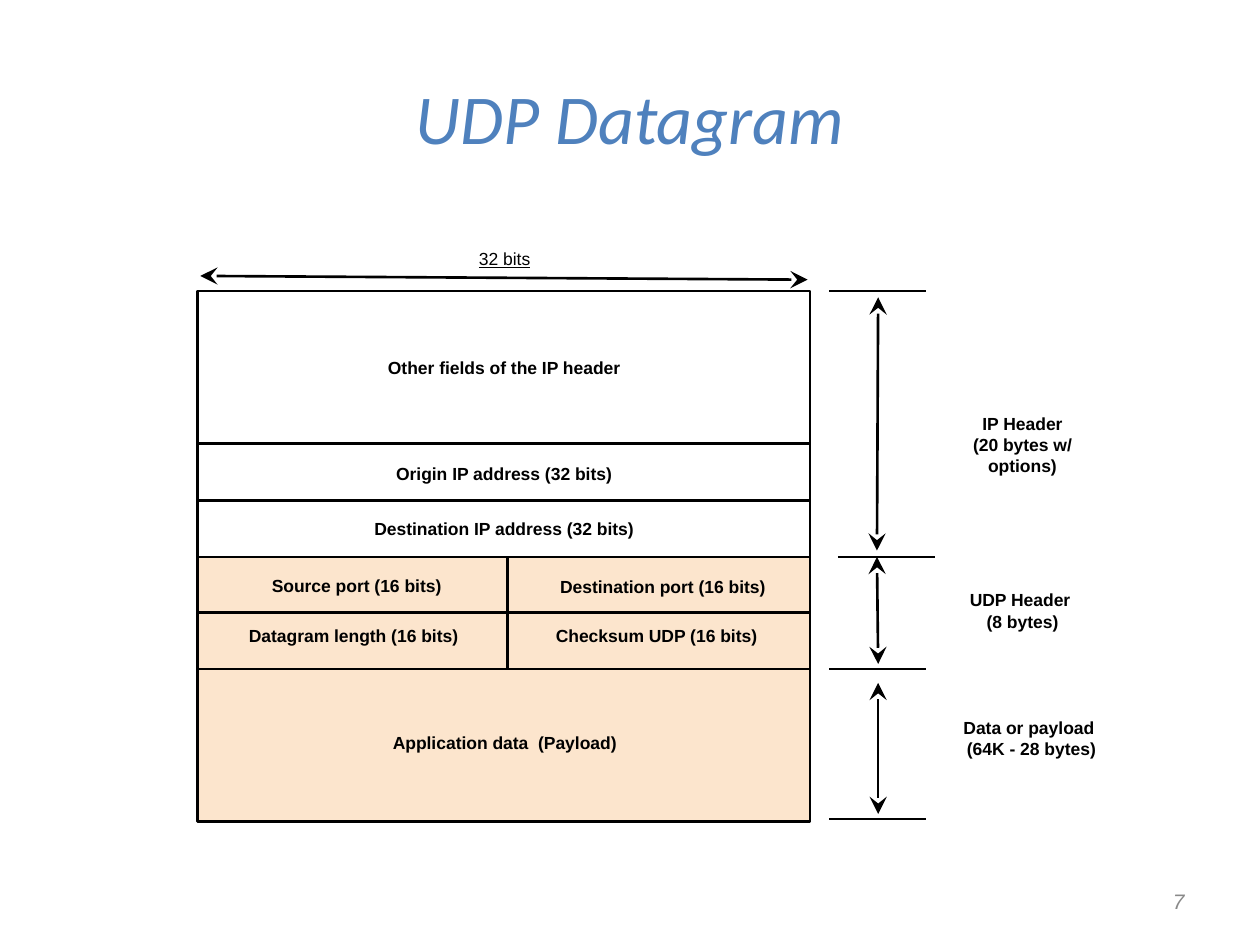
from lxml import etree
from pptx import Presentation
from pptx.dml.color import RGBColor
from pptx.enum.shapes import MSO_CONNECTOR, MSO_SHAPE
from pptx.enum.text import MSO_ANCHOR, PP_ALIGN
from pptx.oxml.ns import qn
from pptx.util import Inches, Pt

BLACK = RGBColor(0x00, 0x00, 0x00)
BLUE = RGBColor(0x4F, 0x81, 0xBD)
GREY = RGBColor(0x89, 0x89, 0x89)
PEACH = RGBColor(0xFC, 0xE5, 0xCD)
STRAIGHT, RECTANGLE = MSO_CONNECTOR.STRAIGHT, MSO_SHAPE.RECTANGLE
MIDDLE = MSO_ANCHOR.MIDDLE
CENTER, RIGHT = PP_ALIGN.CENTER, PP_ALIGN.RIGHT

WIDTH, HEIGHT = Inches(10), Inches(7.5)
COLUMNS, ROWS = 100, 75
LABEL_ROWS = 5.1

# Edges of the datagram, in grid columns and rows
LEFT, SPLIT, END = 15.7, 40.3, 64.3
EDGES = [23.1, 35.2, 39.7, 44.2, 48.6, 53.1, 65.2]

# First column, last column, row, fill, text, label centre (column, row), label width
FIELDS = [
    (LEFT, END, 0, None, "Other fields of the IP header", (40, 29.15), 30.4),
    (LEFT, END, 1, None, "Origin IP address (32 bits)", (40, 37.55), 30.4),
    (LEFT, END, 2, None, "Destination IP address (32 bits)", (40, 41.95), 30.4),
    (LEFT, SPLIT, 3, PEACH, "Source port (16 bits)", (28.3, 46.45), 17.6),
    (SPLIT, END, 3, PEACH, "Destination port (16 bits)", (52.6, 46.55), 21),
    (LEFT, SPLIT, 4, PEACH, "Datagram length (16 bits)", (28.05, 50.45), 22.1),
    (SPLIT, END, 4, PEACH, "Checksum UDP (16 bits)", (52.1, 50.45), 20),
    (LEFT, END, 5, PEACH, "Application data  (Payload)", (40.05, 58.95), 20.5),
]
# Left column and row of each section mark
MARKS = [(65.8, 23.1), (66.5, 44.2), (65.8, 53.1), (65.8, 65)]
MARK_COLUMNS = 7.7
ARROWS = [
    ((15.9, 21.9), (64.1, 22.2)),
    ((69.6, 43.7), (69.7, 23.6)),
    ((69.6, 44.2), (69.7, 52.7)),
    ((69.7, 54.2), (69.7, 64.6)),
]
SECTIONS = [
    (73.5, 32.7, ["IP Header", "(20 bytes w/", "options)"]),
    (73.5, 45.9, ["UDP Header ", "(8 bytes)"]),
    (74.2, 56, ["Data or payload ", "(64K - 28 bytes)"]),
]


class DatagramSlide:
    def __init__(self, slide):
        self.slide = slide
        self.font, self.title_font = "Arial", "Calibri"
        self.size, self.stroke = 10, Pt(1.5)

    def across(self, columns):
        return round(WIDTH * columns / COLUMNS)

    def down(self, rows):
        return round(HEIGHT * rows / ROWS)

    def place(self, left, top, width, height):
        return self.across(left), self.down(top), self.across(width), self.down(height)

    def add_lines(self, frame, lines, align=CENTER, size=None, color=BLACK, font=None,
                  bold=None, italic=None, underline=None):
        frame.word_wrap = True
        frame.vertical_anchor = MIDDLE
        for index, line in enumerate(lines):
            para = frame.paragraphs[0] if index == 0 else frame.add_paragraph()
            para.alignment = align
            span = para.add_run()
            span.text = line
            span.font.name = font or self.font
            span.font.size = Pt(size or self.size)
            span.font.color.rgb = color
            span.font.bold = bold
            span.font.italic = italic
            span.font.underline = underline

    def title(self, text):
        box = self.slide.shapes.title
        box.left, box.top, box.width, box.height = self.place(5, 3, 90, 12.5)
        self.add_lines(box.text_frame, [text], size=40, color=BLUE,
                       font=self.title_font, italic=True)

    def page_number(self, text):
        box = self.slide.shapes.add_textbox(*self.place(71.7, 69.5, 23.3, 4))
        self.add_lines(box.text_frame, [text], align=RIGHT, size=12, color=GREY,
                       italic=True)

    def label(self, left, top, width, height, lines, **look):
        box = self.slide.shapes.add_textbox(*self.place(left, top, width, height))
        frame = box.text_frame
        frame.margin_top = frame.margin_bottom = Inches(0.1)
        self.add_lines(frame, lines, **look)

    def field(self, start, end, row, fill, text, center, label_width):
        top, bottom = EDGES[row:row + 2]
        box = self.slide.shapes.add_shape(
            RECTANGLE, *self.place(start, top, end - start, bottom - top))
        box.shadow.inherit = False
        if fill is None:
            box.fill.background()
        else:
            box.fill.solid()
            box.fill.fore_color.rgb = fill
        box.line.color.rgb = BLACK
        box.line.width = self.stroke
        column, middle = center
        self.label(column - label_width / 2, middle - LABEL_ROWS / 2,
                   label_width, LABEL_ROWS, [text], bold=True)

    def line(self, start, end, arrows=False):
        line = self.slide.shapes.add_connector(
            STRAIGHT, self.across(start[0]), self.down(start[1]),
            self.across(end[0]), self.down(end[1]))
        line.line.color.rgb = BLACK
        line.line.width = self.stroke
        properties = line._element.spPr
        if arrows:
            outline = properties.find(qn("a:ln"))
            for tag in ("a:headEnd", "a:tailEnd"):
                etree.SubElement(outline, qn(tag), type="stealth", w="lg", len="lg")
        etree.SubElement(properties, qn("a:effectLst"))


def main():
    deck = Presentation()
    deck.slide_width, deck.slide_height = WIDTH, HEIGHT
    title_only = deck.slide_layouts[5]
    page = DatagramSlide(deck.slides.add_slide(title_only))

    page.title("UDP Datagram")
    page.page_number("7")
    for field in FIELDS:
        page.field(*field)
    for left, row in MARKS:
        page.line((left, row), (left + MARK_COLUMNS, row))
    for start, end in ARROWS:
        page.line(start, end, arrows=True)
    for left, top, lines in SECTIONS:
        page.label(left, top, 15.3, LABEL_ROWS, lines, bold=True)
    page.label(35.6, 18.9, 8.9, 3.3, ["32 bits"], underline=True)
    deck.save("out.pptx")


if __name__ == "__main__":
    main()
